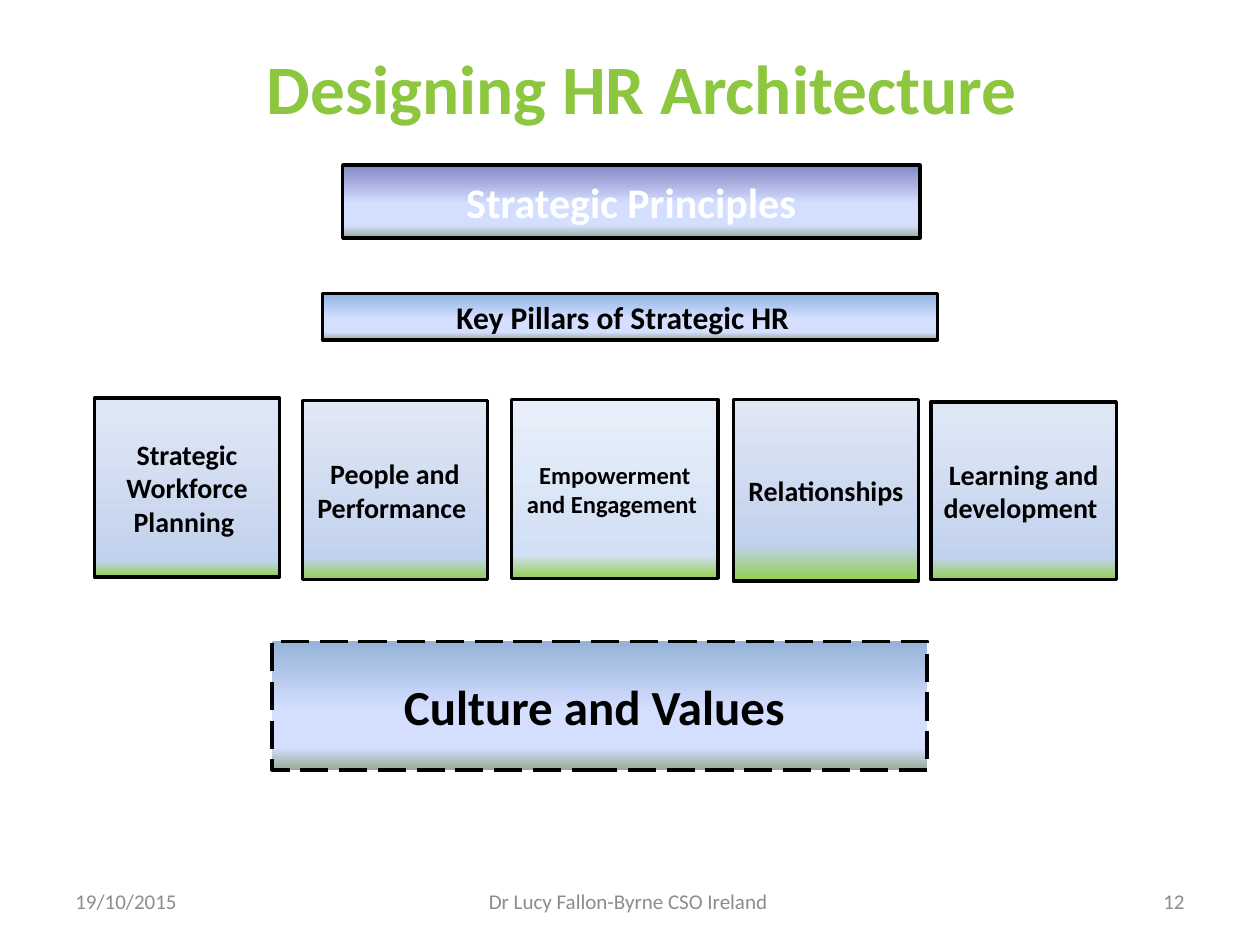
from dataclasses import dataclass

from lxml.etree import SubElement
from pptx import Presentation
from pptx.dml.color import RGBColor
from pptx.enum.dml import MSO_LINE
from pptx.enum.shapes import MSO_SHAPE
from pptx.enum.text import MSO_ANCHOR, PP_ALIGN
from pptx.oxml.ns import qn
from pptx.util import Inches, Pt


@dataclass(frozen=True)
class Theme:
    font: str = "Calibri"
    green: str = "8DC63F"
    black: str = "000000"
    white: str = "FFFFFF"
    grey: str = "8C8C8C"
    violet: str = "8488C4"
    sky: str = "8EB4E3"
    steel: str = "95B3D7"
    grass: str = "92D050"
    pale: str = "D4DEFF"
    moss: str = "96AB94"
    mist: str = "C2D1ED"
    cloud: str = "E1E8F5"
    haze: str = "DDE6F5"
    fog: str = "DFE7F5"
    ice: str = "D2E0F5"
    frost: str = "E8EFFA"
    head: float = 39.6
    base: float = 28
    top: float = 24
    band: float = 18
    card: float = 16
    small: float = 14
    foot: float = 12
    edge: float = 2


THEME = Theme()


def write(frame, lines, size, color, bold=True, align=PP_ALIGN.CENTER):
    frame.word_wrap = True
    frame.vertical_anchor = MSO_ANCHOR.MIDDLE
    for i, line in enumerate(lines):
        para = frame.paragraphs[0] if i == 0 else frame.add_paragraph()
        para.alignment = align
        run = para.add_run()
        run.text = line
        font = run.font
        font.name, font.size, font.bold = THEME.font, Pt(size), bold
        font.color.rgb = RGBColor.from_string(color)


def shade(shape, stops, angle):
    shape.fill.gradient()
    shape.fill.gradient_angle = angle
    group = shape.element.spPr.find(".//" + qn("a:gsLst"))
    for old in list(group):
        group.remove(old)
    for place, color in stops:
        stop = SubElement(group, qn("a:gs"), pos=str(place * 1000))
        SubElement(stop, qn("a:srgbClr"), val=color)


def add_block(slide, box, lines, size, stops, angle, color=THEME.black):
    shape = slide.shapes.add_shape(MSO_SHAPE.RECTANGLE, *map(Inches, box))
    shape.shadow.inherit = False
    shade(shape, stops, angle)
    shape.line.color.rgb = RGBColor.from_string(THEME.black)
    shape.line.width = Pt(THEME.edge)
    write(shape.text_frame, lines, size, color)
    return shape


def add_title(slide, box, text):
    title = slide.shapes.title
    title.left, title.top, title.width, title.height = map(Inches, box)
    write(title.text_frame, [text], THEME.head, THEME.green)


def add_band(slide, box, text, size, start, color=THEME.black):
    stops = [(0, start), (53, THEME.pale), (83, THEME.pale), (100, THEME.moss)]
    return add_block(slide, box, [text], size, stops, 270, color)


def add_cards(slide, box):
    left, top, width, height = box
    t = THEME
    tail = [(90, t.haze), (95, t.fog), (100, t.cloud)]
    plain = [(100, t.cloud)]
    cards = [
        (0, 0, 1.47, 0, ["Strategic Workforce", "Planning "], t.card, [(9, t.mist)] + tail),
        (1.65, 0.02, 1.47, 0, ["People and Performance "], t.card, [(12, t.mist)] + plain),
        (3.31, 0.01, 1.64, 0, ["Empowerment and Engagement "], t.small,
         [(13, t.ice), (100, t.frost)]),
        (5.07, 0.01, 1.47, 0.02, ["Relationships "], t.card, [(20, t.mist)] + plain),
        (width - 1.47, 0.03, 1.47, -0.01, ["Learning and development "], t.card,
         [(12, t.mist)] + tail),
    ]
    for x, y, wide, extra, lines, size, stops in cards:
        spot = (left + x, top + y, wide, height + extra)
        add_block(slide, spot, lines, size, [(0, t.grass)] + stops, 90)


def add_foot(slide, box):
    left, top, width, height = box
    parts = [
        (0, 2.33, "19/10/2015", PP_ALIGN.LEFT),
        (2.92, 3.17, "Dr Lucy Fallon-Byrne CSO Ireland ", PP_ALIGN.CENTER),
        (width - 2.33, 2.33, "12", PP_ALIGN.RIGHT),
    ]
    for x, wide, text, align in parts:
        spot = (left + x, top, wide, height)
        note = slide.shapes.add_textbox(*map(Inches, spot))
        write(note.text_frame, [text], THEME.foot, THEME.grey, False, align)


def main():
    deck = Presentation()
    deck.slide_width, deck.slide_height = Inches(10), Inches(7.5)
    slide = deck.slides.add_slide(deck.slide_layouts[5])
    add_title(slide, (0.59, 0.49, 9.13, 0.39), "Designing HR Architecture ")
    add_band(slide, (2.72, 1.31, 4.58, 0.58), "Strategic Principles",
             THEME.top, THEME.violet, THEME.white)
    add_cards(slide, (0.75, 3.16, 8.11, 1.42))
    add_band(slide, (2.56, 2.33, 4.88, 0.37), "Key Pillars of Strategic HR  ",
             THEME.band, THEME.sky)
    base = add_band(slide, (2.16, 5.09, 5.2, 1.02), "Culture and Values ",
                    THEME.base, THEME.steel)
    base.line.dash_style = MSO_LINE.LONG_DASH
    add_foot(slide, (0.5, 6.95, 9, 0.4))
    deck.save("out.pptx")


if __name__ == "__main__":
    main()
